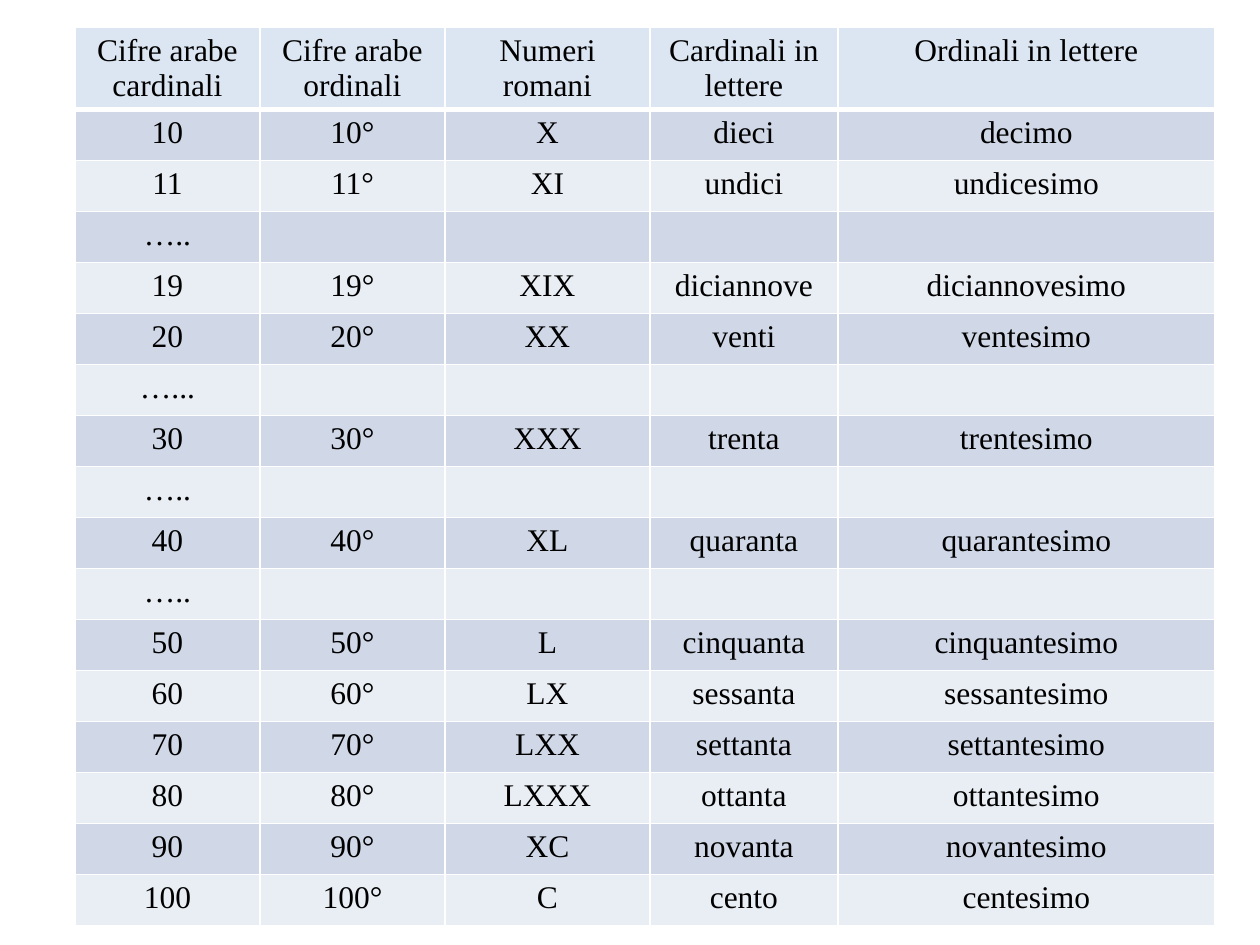
from dataclasses import dataclass

from lxml import etree
from pptx import Presentation
from pptx.dml.color import RGBColor
from pptx.enum.text import PP_ALIGN
from pptx.oxml.ns import qn
from pptx.util import Emu, Pt

CENTER = PP_ALIGN.CENTER
BLANK_LAYOUT = 6


@dataclass(frozen=True)
class Theme:
    font: str = "Times New Roman"
    size: int = 18
    text: str = "000000"
    header: str = "DCE6F2"
    bands: tuple = ("D0D8E8", "E9EDF4")
    border: str = "FFFFFF"
    thin: int = 1
    thick: int = 3


THEME = Theme()

LEFT, TOP = 75, 27
COLUMN_WIDTHS = [185, 185, 205, 188, 377]
HEADER_HEIGHT, ROW_HEIGHT = 82, 51

HEADERS = ["Cifre arabe cardinali", "Cifre arabe ordinali", "Numeri romani",
           "Cardinali in lettere", "Ordinali in lettere"]
NUMBERS = [
    ("10", "X", "dieci", "decimo"),
    ("11", "XI", "undici", "undicesimo"),
    ("…..",),
    ("19", "XIX", "diciannove", "diciannovesimo"),
    ("20", "XX", "venti", "ventesimo"),
    ("…...",),
    ("30", "XXX", "trenta", "trentesimo"),
    ("…..",),
    ("40", "XL", "quaranta", "quarantesimo"),
    ("…..",),
    ("50", "L", "cinquanta", "cinquantesimo"),
    ("60", "LX", "sessanta", "sessantesimo"),
    ("70", "LXX", "settanta", "settantesimo"),
    ("80", "LXXX", "ottanta", "ottantesimo"),
    ("90", "XC", "novanta", "novantesimo"),
    ("100", "C", "cento", "centesimo"),
]


def px(n):
    return Emu(round(n * 914400 / 126))


def table_row(entry):
    if len(entry) == 1:
        return [entry[0], "", "", "", ""]
    number, roman, cardinal, ordinal = entry
    return [number, f"{number}°", roman, cardinal, ordinal]


def set_borders(cell, widths):
    tc_pr = cell._tc.get_or_add_tcPr()
    for side, width in widths.items():
        ln = etree.SubElement(tc_pr, qn(f"a:ln{side}"), w=str(Pt(width)))
        fill = etree.SubElement(ln, qn("a:solidFill"))
        etree.SubElement(fill, qn("a:srgbClr"), val=THEME.border)


def set_text(cell, text):
    p = cell.text_frame.paragraphs[0]
    p.alignment = CENTER
    font = p.font
    if text:
        r = p.add_run()
        r.text = text
        font = r.font
    formats = {"name": THEME.font, "size": Pt(THEME.size), "bold": False}
    for name, value in formats.items():
        setattr(font, name, value)
    font.color.rgb = RGBColor.from_string(THEME.text)


def format_cell(cell, text, row):
    borders = dict.fromkeys("LRTB", THEME.thin)
    if row == 0:
        borders["B"] = THEME.thick
    elif row == 1:
        borders["T"] = THEME.thick
    set_borders(cell, borders)
    color = THEME.bands[(row - 1) % 2] if row else THEME.header
    cell.fill.solid()
    cell.fill.fore_color.rgb = RGBColor.from_string(color)
    set_text(cell, text)


def add_number_table(s):
    rows = [HEADERS] + [table_row(entry) for entry in NUMBERS]
    heights = [HEADER_HEIGHT] + [ROW_HEIGHT] * len(NUMBERS)
    table = s.shapes.add_table(len(rows), len(HEADERS), px(LEFT), px(TOP),
                               px(sum(COLUMN_WIDTHS)), px(sum(heights))).table
    for column, width in zip(table.columns, COLUMN_WIDTHS):
        column.width = px(width)
    for i, (texts, height) in enumerate(zip(rows, heights)):
        table.rows[i].height = px(height)
        for j, text in enumerate(texts):
            format_cell(table.cell(i, j), text, i)


def main():
    prs = Presentation()
    prs.slide_width, prs.slide_height = px(1260), px(945)
    s = prs.slides.add_slide(prs.slide_layouts[BLANK_LAYOUT])
    add_number_table(s)
    prs.save("out.pptx")


if __name__ == "__main__":
    main()
